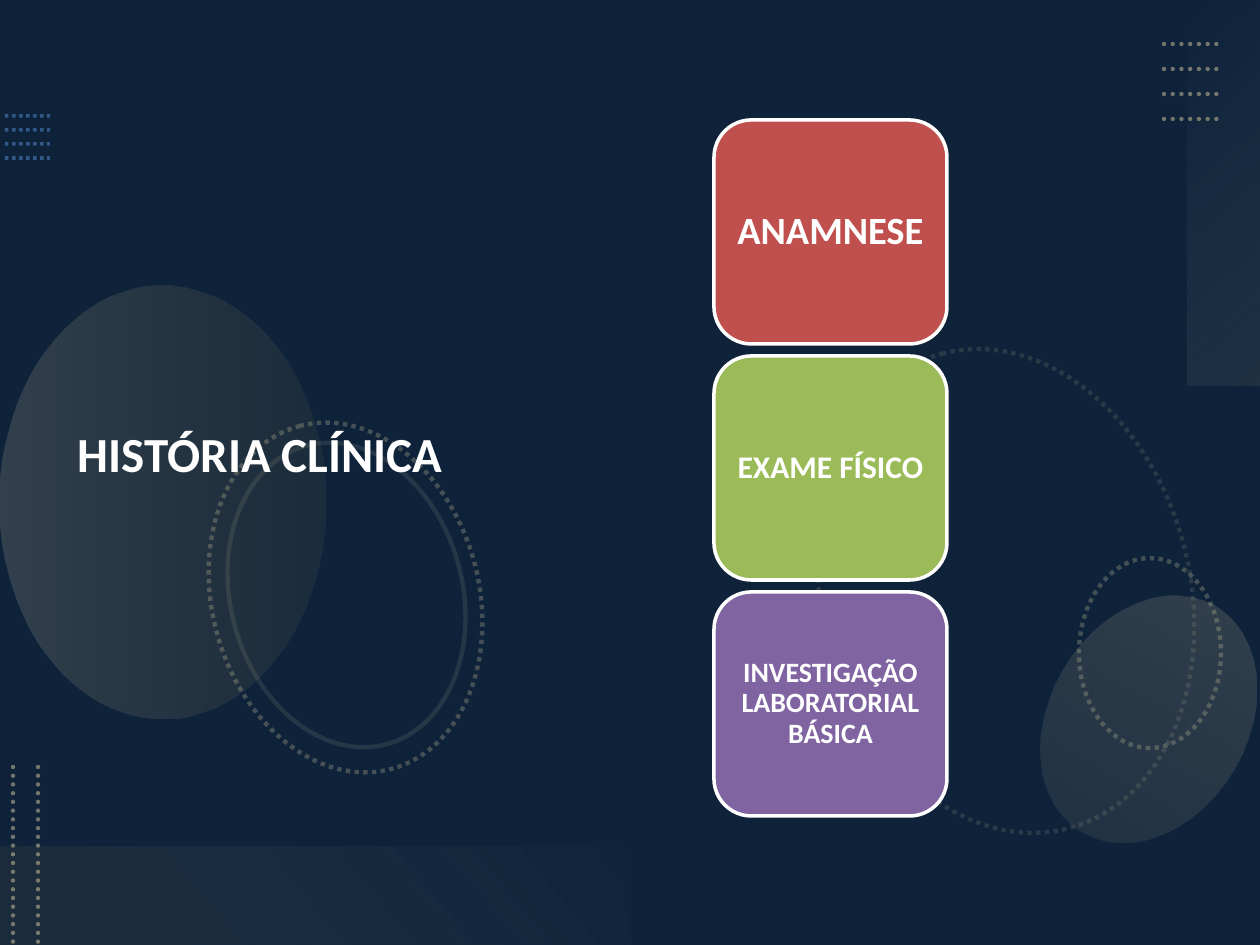
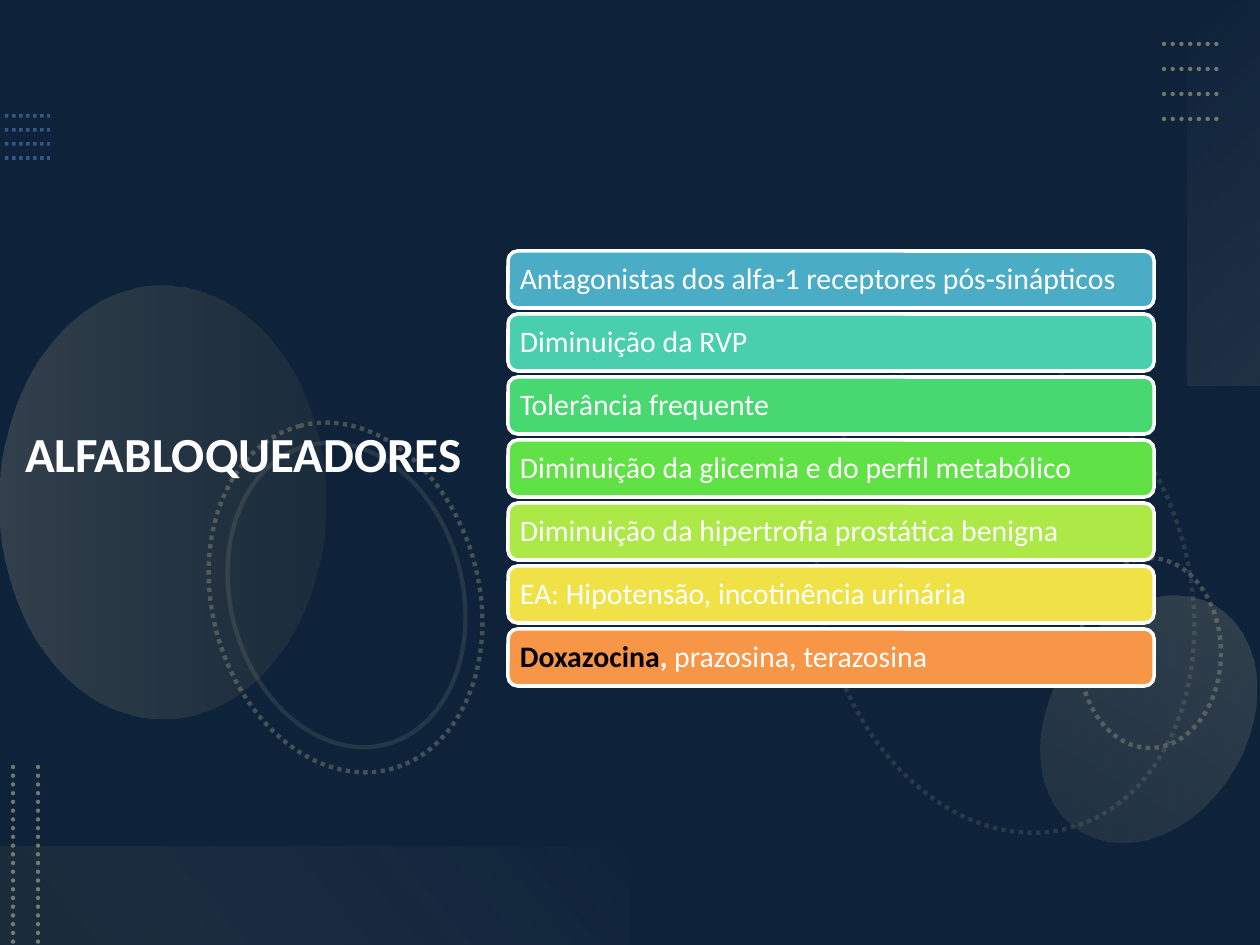
from lxml.etree import SubElement, fromstring
from pptx import Presentation
from pptx.dml.color import RGBColor
from pptx.enum.dml import MSO_LINE
from pptx.enum.shapes import MSO_CONNECTOR, MSO_SHAPE as SHAPE
from pptx.enum.text import MSO_ANCHOR as ANCHOR, MSO_AUTO_SIZE as AUTO, PP_ALIGN as ALIGN
from pptx.oxml.ns import nsdecls, qn
from pptx.util import Emu, Pt

W, H, PX_PER_INCH = 1260, 945, 126
FONT = "Calibri"
COLORS = {
    "navy": "1F497D", "black": "000000", "white": "FFFFFF", "blue": "558ED5",
    "sand": "C4BD97", "olive": "948A54", "cream": "F8F7F3", "ivory": "F5F4ED",
    "red": "C0504D", "green": "9BBB59", "purple": "8064A2", "cyan": "4BACC6",
    "teal": "49CFAE", "mint": "47D872", "grass": "60E146", "lime": "ACE946",
    "yellow": "F0E146", "orange": "F79646",
}
SQUARES = [("ANAMNESE", 22, "red"), ("EXAME FÍSICO", 18, "green"),
           ("INVESTIGAÇÃO LABORATORIAL BÁSICA", 16, "purple")]
BARS = [
    ("cyan", [("Antagonistas dos alfa-1 receptores pós-sinápticos", {})]),
    ("teal", [("Diminuição da RVP", {})]),
    ("mint", [("Tolerância frequente", {})]),
    ("grass", [("Diminuição da glicemia e do perfil metabólico", {})]),
    ("lime", [("Diminuição da hipertrofia prostática benigna", {})]),
    ("yellow", [("EA: Hipotensão, incotinência urinária", {})]),
    ("orange", [("Doxazocina", {"bold": True, "color": "black"}),
                (",", {"bold": True}), (" prazosina, terazosina", {})]),
]


def px(*values):
    """Turn pixel lengths into EMU."""
    return [Emu(round(v * 914400 / PX_PER_INCH)) for v in values]


def rgb(name):
    """Look up a named colour."""
    return RGBColor.from_string(COLORS[name])


def assign(obj, **values):
    """Set attributes from a dict of format values."""
    for name, value in values.items():
        setattr(obj, name, value)


def fade(sp, holder, alpha):
    """Give the colour inside a fill or line holder an opacity in percent."""
    clr = sp.element.spPr.find(f"{holder}//{qn('a:srgbClr')}")
    SubElement(clr, qn("a:alpha"), val=str(alpha * 1000))


def add_shape(s, kind, box, rot=0):
    """Add a plain preset shape without fill, line or shadow."""
    sp = s.shapes.add_shape(kind, *px(*box))
    sp.rotation = rot
    sp.shadow.inherit = False
    sp.fill.background()
    sp.line.fill.background()
    return sp


def fill_gradient(sp, stops, angle):
    """Fill a shape with a linear gradient of (position, colour, opacity) stops."""
    gs = "".join(f'<a:gs pos="{pos * 1000}"><a:srgbClr val="{COLORS[c]}">'
                 f'<a:alpha val="{alpha * 1000}"/></a:srgbClr></a:gs>'
                 for pos, c, alpha in stops)
    grad = fromstring(f'<a:gradFill {nsdecls("a")} rotWithShape="1"><a:gsLst>{gs}</a:gsLst>'
                      f'<a:lin ang="{angle * 60000}" scaled="0"/></a:gradFill>')
    spPr = sp.element.spPr
    spPr.replace(spPr.find(qn("a:noFill")), grad)


def style_line(sp, color, width, alpha, dotted=True):
    """Colour a translucent outline or connector."""
    sp.line.color.rgb = rgb(color)
    sp.line.width = Pt(width)
    if dotted:
        sp.line.dash_style = MSO_LINE.ROUND_DOT
    fade(sp, qn("a:ln"), alpha)


def add_dots(s, ends, color="sand", width=2.5, alpha=55, rounded=True):
    """Add a dotted straight line."""
    cn = s.shapes.add_connector(MSO_CONNECTOR.STRAIGHT, *px(*ends))
    style_line(cn, color, width, alpha)
    spPr = cn.element.spPr
    if rounded:
        spPr.find(qn("a:ln")).set("cap", "rnd")
    SubElement(spPr, qn("a:effectLst"))


def add_ring(s, box, rot, alpha, dotted=True):
    """Add an outlined ellipse."""
    style_line(add_shape(s, SHAPE.OVAL, box, rot), "sand", 2.5, alpha, dotted)


def add_decor(s):
    """Draw the background and ornaments that every slide shares."""
    s.background.fill.solid()
    s.background.fill.fore_color.rgb = rgb("navy")
    veil = add_shape(s, SHAPE.RECTANGLE, (0, 0, W, H))
    veil.fill.solid()
    veil.fill.fore_color.rgb = rgb("black")
    fade(veil, qn("a:solidFill"), 53)

    for i in range(4):
        y = 116 + 14 * i
        add_dots(s, (5, y, 50, y), "blue", 2, 50, rounded=False)
    add_ring(s, (760, 407, 491, 368), 75, 15)
    add_ring(s, (1055, 582, 190, 142), 270, 30)
    for kind, box, rot, stops, angle in (
        (SHAPE.OVAL, (-54, 340, 433, 325), 270, [(0, "sand", 20), (100, "olive", 10)], 90),
        (SHAPE.OVAL, (1050, 588, 197, 262), 210, [(0, "sand", 10), (100, "sand", 20)], 90),
        (SHAPE.RECTANGLE, (1031, 156, 386, 73), 270, [(0, "cream", 0), (100, "sand", 10)], 140),
        (SHAPE.RECTANGLE, (0, 847, 630, 98), 180, [(10, "olive", 10), (100, "ivory", 0)], 140),
    ):
        fill_gradient(add_shape(s, kind, box, rot), stops, angle)
    add_ring(s, (168, 464, 355, 267), 75, 30)
    add_ring(s, (192, 479, 309, 232), 75, 12, dotted=False)
    for i in range(4):
        y = 44 + 25 * i
        add_dots(s, (1164, y, 1221, y))
    for x in (38, 13):
        add_dots(s, (x, 767, x, H))


def write(sp, runs, size, align, after, margins):
    """Write one paragraph of (text, format) runs, centred vertically."""
    tf = sp.text_frame
    left, top = px(*margins)
    assign(tf, word_wrap=True, auto_size=AUTO.NONE, vertical_anchor=ANCHOR.MIDDLE,
           margin_left=left, margin_right=left, margin_top=top, margin_bottom=top)
    p = tf.paragraphs[0]
    assign(p, alignment=align, line_spacing=0.9, space_after=Pt(after))
    for text, fmt in runs:
        r = p.add_run()
        r.text = text
        assign(r.font, name=FONT, size=Pt(size), bold=fmt.get("bold", False))
        r.font.color.rgb = rgb(fmt.get("color", "white"))


def add_title(s, text, box):
    """Place the title in front of the ornaments."""
    sp = s.shapes.title
    sp.element.getparent().append(sp.element)
    assign(sp, **dict(zip(("left", "top", "width", "height"), px(*box))))
    write(sp, [(text, {"bold": True})], 28, ALIGN.LEFT, 6, (12, 6))


def add_card(s, box, color, runs, size, align):
    """Add a rounded card with a white outline and text."""
    sp = add_shape(s, SHAPE.ROUNDED_RECTANGLE, box)
    sp.fill.solid()
    sp.fill.fore_color.rgb = rgb(color)
    sp.line.color.rgb = rgb("white")
    sp.line.width = Pt(2)
    write(sp, runs, size, align, 0, (9, 4))


def add_slide(prs, title, box):
    """Add a decorated slide with its title."""
    s = prs.slides.add_slide(prs.slide_layouts[5])
    add_decor(s)
    add_title(s, title, box)
    return s


def main():
    """Build and save both slides."""
    prs = Presentation()
    prs.slide_width, prs.slide_height = px(W, H)

    s = add_slide(prs, "HISTÓRIA CLÍNICA", (66, 68, 433, 777))
    for i, (text, size, color) in enumerate(SQUARES):
        add_card(s, (714, 120 + 236 * i, 233, 224), color,
                 [(text, {"bold": True})], size, ALIGN.CENTER)

    s = add_slide(prs, "ALFABLOQUEADORES", (13, 68, 486, 777))
    for i, (color, runs) in enumerate(BARS):
        add_card(s, (508, 251 + 63 * i, 646, 57), color, runs, 17, ALIGN.LEFT)

    prs.save("out.pptx")


if __name__ == "__main__":
    main()
